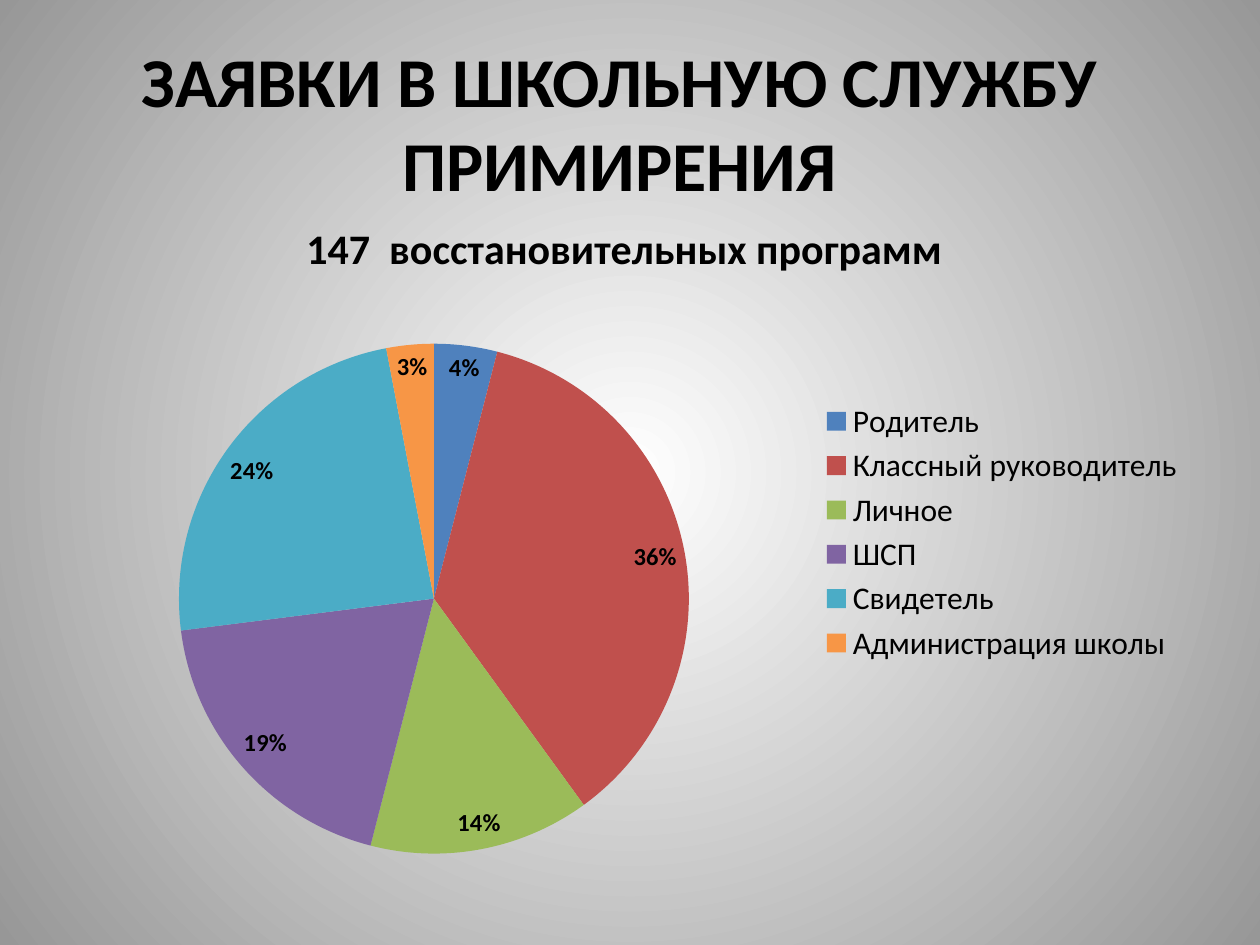
from copy import deepcopy
from dataclasses import dataclass
from typing import Optional

from lxml.etree import SubElement
from pptx import Presentation
from pptx.chart.data import CategoryChartData
from pptx.dml.color import RGBColor
from pptx.enum.chart import XL_CHART_TYPE, XL_LABEL_POSITION, XL_LEGEND_POSITION
from pptx.enum.text import MSO_ANCHOR, PP_ALIGN
from pptx.oxml import parse_xml
from pptx.oxml.ns import nsdecls, qn
from pptx.util import Emu, Pt

PX_PER_INCH = 126


@dataclass(frozen=True)
class Theme:
    font: str = "Calibri"
    ink: str = "000000"
    glow: str = "FFFFFF"
    edge: str = "979797"
    title_size: int = 40
    chart_title_size: int = 24
    legend_size: int = 18
    label_size: int = 14


@dataclass(frozen=True)
class Box:
    """An area of the slide in px."""
    x: int
    y: int
    w: int
    h: int


@dataclass(frozen=True)
class Source:
    """Who filed the requests, their share, and the px shift of the share's label."""
    name: str
    share: float
    color: str
    dx: int
    dy: int


THEME = Theme()
TITLE_BOX = Box(84, 28, 1071, 188)
CHART_BOX = Box(53, 193, 1144, 679)
PIE_BOX = Box(179, 344, 510, 510)
LEGEND_BOX = Box(817, 396, 370, 272)
CHART_TITLE_XY = (299, 212)

SOURCES = [
    Source("Родитель", 0.04, "4F81BD", 15, 0),
    Source("Классный руководитель", 0.36, "C0504D", 0, -10),
    Source("Личное", 0.14, "9BBB59", 21, -4),
    Source("ШСП", 0.19, "8064A2", -5, -4),
    Source("Свидетель", 0.24, "4BACC6", -3, 3),
    Source("Администрация школы", 0.03, "F79646", -14, 0),
]


def px(n: int) -> Emu:
    return Emu(round(n * 914400 / PX_PER_INCH))


def place(box: Box) -> tuple:
    return px(box.x), px(box.y), px(box.w), px(box.h)


def style_font(font, *, size: int, bold: bool = False) -> None:
    font.name = THEME.font
    font.size = Pt(size)
    font.bold = bold
    font.color.rgb = RGBColor.from_string(THEME.ink)


def write(tf, text: str, *, size: int, bold: bool = True,
          align: PP_ALIGN = PP_ALIGN.CENTER) -> None:
    p = tf.paragraphs[0]
    p.alignment = align
    r = p.add_run()
    r.text = text
    style_font(r.font, size=size, bold=bold)


def paint_background(s) -> None:
    fill = s.background.fill
    fill.gradient()
    for stop, color in zip(fill.gradient_stops, (THEME.glow, THEME.edge)):
        stop.color.rgb = RGBColor.from_string(color)
    grad = s.element.find(".//" + qn("a:gradFill"))
    grad.replace(grad.find(qn("a:lin")), parse_xml(
        f'<a:path {nsdecls("a")} path="circle">'
        '<a:fillToRect l="50000" t="50000" r="50000" b="50000"/></a:path>'))


def set_layout(element, after: Optional[str], **values) -> None:
    """Give a chart part a manual layout, behind the named child or else first."""
    for old in element.findall(qn("c:layout")):
        element.remove(old)
    layout = parse_xml(f'<c:layout {nsdecls("c")}><c:manualLayout/></c:layout>')
    for tag, value in values.items():
        SubElement(layout[0], qn(f"c:{tag}")).set("val", str(value))
    if after:
        element.find(qn(after)).addnext(layout)
    else:
        element.insert(0, layout)


def share_of_chart(dx: int, dy: int) -> tuple[float, float]:
    return round(dx / CHART_BOX.w, 3), round(dy / CHART_BOX.h, 3)


def edges(x: int, y: int) -> dict:
    fx, fy = share_of_chart(x - CHART_BOX.x, y - CHART_BOX.y)
    return {"xMode": "edge", "yMode": "edge", "x": fx, "y": fy}


def area(box: Box) -> dict:
    fw, fh = share_of_chart(box.w, box.h)
    return {**edges(box.x, box.y), "w": fw, "h": fh}


def label_slices(series) -> None:
    labels = series.data_labels
    labels.show_value = True
    labels.number_format = "0%"
    labels.number_format_is_linked = False
    labels.position = XL_LABEL_POSITION.INSIDE_END
    style_font(labels.font, size=THEME.label_size, bold=True)
    for i, src in enumerate(SOURCES):
        label = series.points[i].data_label
        label.position = XL_LABEL_POSITION.INSIDE_END
        style_font(label.font, size=THEME.label_size, bold=True)

    group = series._element.find(qn("c:dLbls"))
    for leader in group.findall(qn("c:showLeaderLines")):
        leader.set("val", "0")
    for src, item in zip(SOURCES, group.findall(qn("c:dLbl"))):
        fx, fy = share_of_chart(src.dx, src.dy)
        set_layout(item, "c:idx", x=fx, y=fy)
        item.find(qn("c:layout")).addnext(deepcopy(group.find(qn("c:numFmt"))))


def add_pie(s, title: str) -> None:
    data = CategoryChartData(number_format="0%")
    data.categories = [src.name for src in SOURCES]
    data.add_series("Series 1", [src.share for src in SOURCES])
    chart = s.shapes.add_chart(XL_CHART_TYPE.PIE, *place(CHART_BOX), data).chart
    style_font(chart.font, size=THEME.legend_size)

    chart.has_title = True
    write(chart.chart_title.text_frame, title, size=THEME.chart_title_size)
    chart.chart_title.include_in_layout = False

    chart.has_legend = True
    chart.legend.position = XL_LEGEND_POSITION.RIGHT
    chart.legend.include_in_layout = False
    style_font(chart.legend.font, size=THEME.legend_size)

    plot = chart.plots[0]
    plot.vary_by_categories = True
    series = plot.series[0]
    for i, src in enumerate(SOURCES):
        fill = series.points[i].format.fill
        fill.solid()
        fill.fore_color.rgb = RGBColor.from_string(src.color)
    label_slices(series)

    root = chart.element
    set_layout(root.find(".//" + qn("c:plotArea")), None,
               layoutTarget="inner", **area(PIE_BOX))
    set_layout(root.find(".//" + qn("c:legend")), "c:legendPos", **area(LEGEND_BOX))
    set_layout(root.find(".//" + qn("c:title")), "c:tx", **edges(*CHART_TITLE_XY))


def main() -> None:
    prs = Presentation()
    prs.slide_width, prs.slide_height = px(1260), px(945)
    s = prs.slides.add_slide(prs.slide_layouts[6])
    paint_background(s)

    tf = s.shapes.add_textbox(*place(TITLE_BOX)).text_frame
    tf.word_wrap = True
    tf.vertical_anchor = MSO_ANCHOR.MIDDLE
    write(tf, "ЗАЯВКИ В ШКОЛЬНУЮ СЛУЖБУ ПРИМИРЕНИЯ", size=THEME.title_size)

    add_pie(s, "147  восстановительных программ")
    prs.save("out.pptx")


if __name__ == "__main__":
    main()
